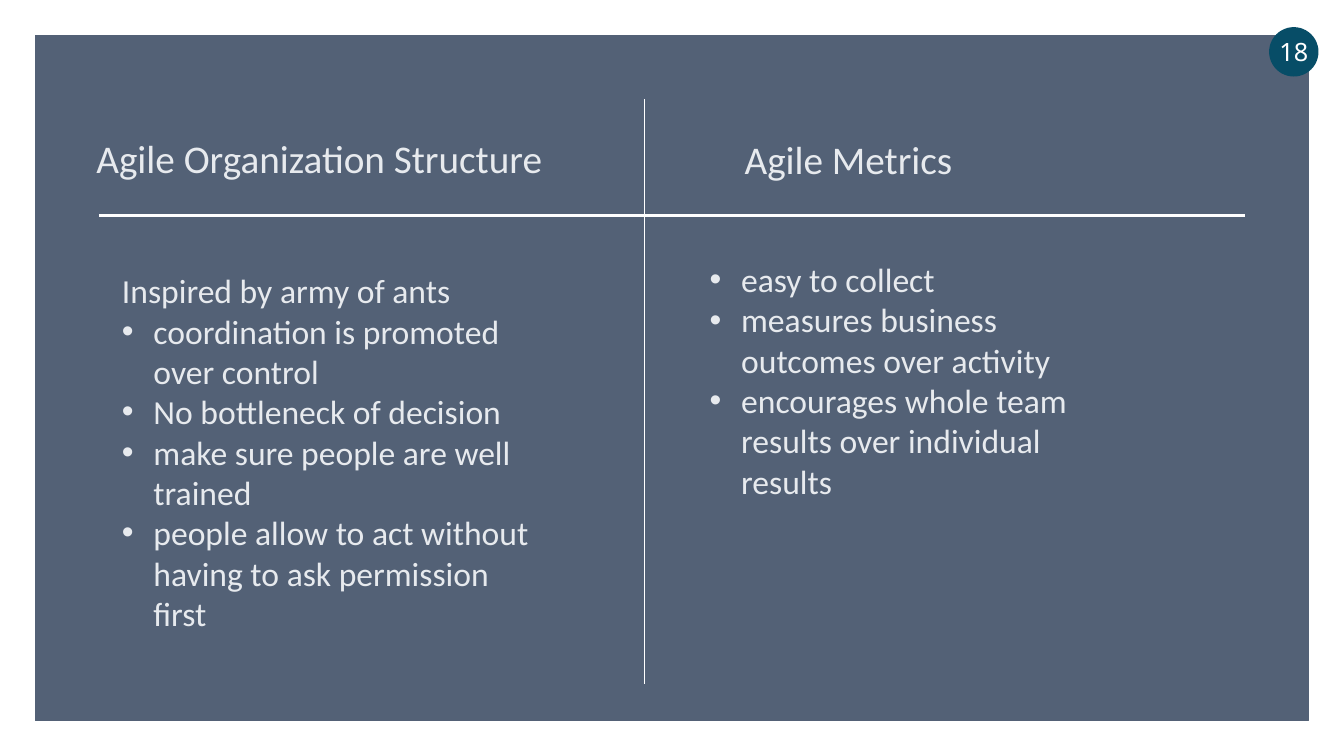
from lxml import etree
from pptx import Presentation
from pptx.dml.color import RGBColor
from pptx.enum import shapes, text
from pptx.oxml.ns import qn
from pptx.util import Pt

PAGE_NUMBER = "18"
STRUCTURE = {
    "heading": "Agile Organization Structure",
    "intro": "Inspired by army of ants",
    "points": [
        "coordination is promoted over control",
        "No bottleneck of decision",
        "make sure people are well trained",
        "people allow to act without having to ask permission first",
    ],
}
METRICS = {
    "heading": "Agile Metrics",
    "points": [
        "easy to collect",
        "measures business outcomes over activity",
        "encourages whole team results over individual results",
    ],
}

THEME = {
    "panel": RGBColor(0x53, 0x61, 0x76),
    "badge": RGBColor(0x07, 0x4D, 0x67),
    "rule": RGBColor(0xFF, 0xFF, 0xFF),
    "heading": {"name": "Calibri", "size": Pt(28), "bold": False, "color": RGBColor(0xE7, 0xEA, 0xEE)},
    "body": {"name": "Calibri", "size": Pt(24), "bold": False, "color": RGBColor(0xE7, 0xEA, 0xEE)},
    "number": {"name": "Noto Sans", "size": Pt(18), "bold": False, "color": RGBColor(0xFF, 0xFF, 0xFF)},
}
HEADING_SIZE = (355.7, 41)
HEADING_INSET = 13.5
LIST_WIDTH = 307.4
BULLET_INDENT = 22.5
COMPARISON_LAYOUT = 4


def place(shape, left, top, width, height):
    for side, points in zip(("left", "top", "width", "height"), (left, top, width, height)):
        setattr(shape, side, Pt(points))


def style(paragraph, look):
    for key, value in look.items():
        if key == "color":
            paragraph.font.color.rgb = value
        else:
            setattr(paragraph.font, key, value)


def set_frame(shape, **changes):
    settings = {
        "word_wrap": True,
        "auto_size": text.MSO_AUTO_SIZE.NONE,
        "vertical_anchor": text.MSO_ANCHOR.TOP,
    }
    for key, value in {**settings, **changes}.items():
        setattr(shape.text_frame, key, value)
    return shape.text_frame


def set_bullet(paragraph, bulleted):
    props = paragraph._p.get_or_add_pPr()
    indent = Pt(BULLET_INDENT) if bulleted else 0
    props.set("marL", str(indent))
    props.set("indent", str(-indent))
    if bulleted:
        etree.SubElement(props, qn("a:buFont")).set("typeface", "Arial")
        etree.SubElement(props, qn("a:buChar")).set("char", "•")
    else:
        etree.SubElement(props, qn("a:buNone"))


def fill_heading(holder, words, left, top):
    place(holder, left, top, *HEADING_SIZE)
    frame = set_frame(holder, margin_left=Pt(HEADING_INSET))
    frame.text = words
    line = frame.paragraphs[0]
    line.alignment = text.PP_ALIGN.LEFT
    line.space_before = Pt(0)
    style(line, THEME["heading"])


def fill_list(holder, column, left, top, height):
    place(holder, left, top, LIST_WIDTH, height)
    frame = set_frame(holder)
    intro = [column["intro"]] if "intro" in column else []
    frame.text = "\n".join(intro + column["points"])
    for position, line in enumerate(frame.paragraphs):
        line.space_before = Pt(0)
        set_bullet(line, position >= len(intro))
        style(line, THEME["body"])


def add_solid(slide, kind, color, *box):
    shape = slide.shapes.add_shape(kind, *map(Pt, box))
    shape.shadow.inherit = False
    shape.fill.solid()
    shape.fill.fore_color.rgb = color
    shape.line.color.rgb = color
    shape.line.width = Pt(1)
    return shape


def add_rule(slide, weight, *ends):
    rule = slide.shapes.add_connector(shapes.MSO_CONNECTOR.STRAIGHT, *map(Pt, ends))
    rule.line.color.rgb = THEME["rule"]
    rule.line.width = Pt(weight)
    etree.SubElement(rule._element.spPr, qn("a:effectLst"))


def main():
    deck = Presentation()
    deck.slide_width, deck.slide_height = Pt(960), Pt(540)
    slide = deck.slides.add_slide(deck.slide_layouts[COMPARISON_LAYOUT])
    holders = {holder.placeholder_format.idx: holder for holder in slide.placeholders}

    panel = add_solid(slide, shapes.MSO_SHAPE.RECTANGLE, THEME["panel"], 25.2, 25.2, 909.4, 489.6)
    panel.line.width = Pt(10 / 10)
    slide.shapes._spTree.insert(2, panel._element)  # behind the placeholders

    fill_heading(holders[0], STRUCTURE["heading"], 55.4, 92.2)
    fill_heading(holders[3], METRICS["heading"], 518.4, 92.9)
    fill_list(holders[2], STRUCTURE, 79.9, 189.4, 269.3)
    fill_list(holders[4], METRICS, 499.7, 181.4, 181.4)
    spare = holders[1]._element
    spare.getparent().remove(spare)

    add_rule(slide, 1.75, 70.6, 154.1, 889.2, 154.1)
    add_rule(slide, 0.5, 460.1, 70.6, 460.1, 488.9)

    badge = add_solid(slide, shapes.MSO_SHAPE.OVAL, THEME["badge"], 906.5, 19.4, 35.3, 35.3)
    badge.line.fill.background()
    frame = set_frame(badge, word_wrap=False, vertical_anchor=text.MSO_ANCHOR.MIDDLE)
    frame.text = PAGE_NUMBER
    frame.paragraphs[0].alignment = text.PP_ALIGN.CENTER
    style(frame.paragraphs[0], THEME["number"])

    deck.save("out.pptx")


if __name__ == "__main__":
    main()
